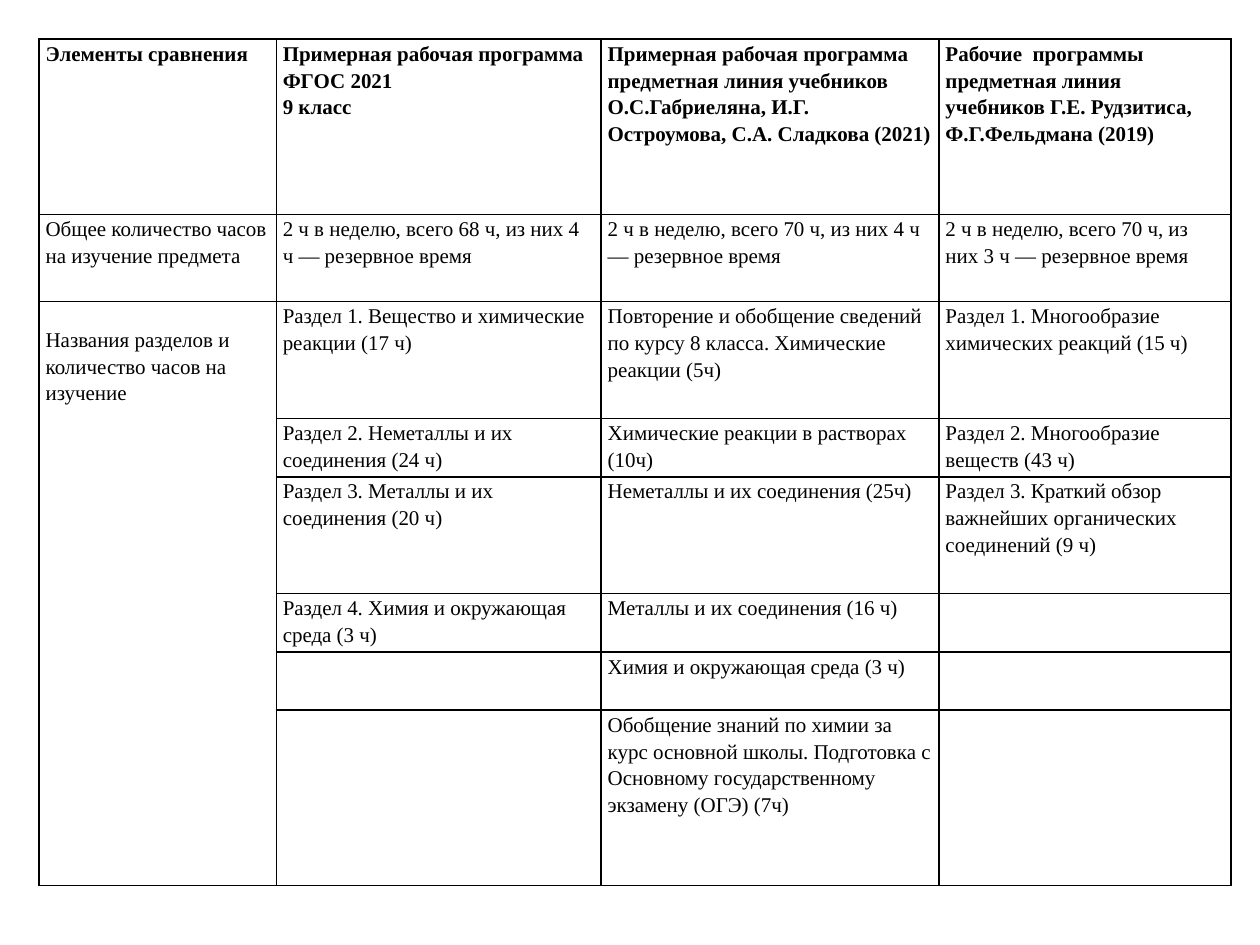
from dataclasses import dataclass

from lxml import etree
from pptx import Presentation
from pptx.dml.color import RGBColor
from pptx.oxml.ns import qn
from pptx.table import _Cell
from pptx.util import Cm, Pt

BLANK_LAYOUT = 6
FONT = "Times New Roman"
INK = "000000"
COLUMN_WIDTHS = (4.78, 6.55, 6.81, 5.89)
TABLE_LEFT = TABLE_TOP = 0.79
TABLE_HEIGHT = 17.06
SIDE_INSET = 0.13
SECTIONS_TOP_INSET = 0.47


@dataclass(frozen=True)
class ComparisonRow:
    lines: int
    texts: tuple[str, str, str, str]
    bold: bool = False


COMPARISON = (
    ComparisonRow(6, (
        "Элементы сравнения",
        "Примерная рабочая программа ФГОС 2021\n9 класс",
        "Примерная рабочая программа предметная линия учебников "
        "О.С.Габриеляна, И.Г. Остроумова, С.А. Сладкова (2021)",
        "Рабочие  программы предметная линия учебников "
        "Г.Е. Рудзитиса, Ф.Г.Фельдмана (2019)",
    ), bold=True),
    ComparisonRow(3, (
        "Общее количество часов на изучение предмета",
        "2 ч в неделю, всего 68 ч, из них 4 ч — резервное время",
        "2 ч в неделю, всего 70 ч, из них 4 ч — резервное время",
        "2 ч в неделю, всего 70 ч, из них 3 ч — резервное время",
    )),
    ComparisonRow(4, (
        "Названия разделов и количество часов на изучение",
        "Раздел 1. Вещество и химические реакции (17 ч)",
        "Повторение и обобщение сведений по курсу 8 класса. Химические реакции (5ч)",
        "Раздел 1. Многообразие химических реакций (15 ч)",
    )),
    ComparisonRow(2, (
        "",
        "Раздел 2. Неметаллы и их соединения (24 ч)",
        "Химические реакции в растворах (10ч)",
        "Раздел 2. Многообразие веществ (43 ч)",
    )),
    ComparisonRow(4, (
        "",
        "Раздел 3. Металлы и их соединения (20 ч)",
        "Неметаллы и их соединения (25ч)",
        "Раздел 3. Краткий обзор важнейших органических соединений (9 ч)",
    )),
    ComparisonRow(2, (
        "",
        "Раздел 4. Химия и окружающая среда (3 ч)",
        "Металлы и их соединения (16 ч)",
        "",
    )),
    ComparisonRow(2, ("", "", "Химия и окружающая среда (3 ч)", "")),
    ComparisonRow(6, (
        "",
        "",
        "Обобщение знаний по химии за курс основной школы. Подготовка с "
        "Основному государственному экзамену (ОГЭ) (7ч)",
        "",
    )),
)
SECTIONS_ROW = 2


def color(value: str) -> RGBColor:
    return RGBColor.from_string(value)


def draw_borders(cell: _Cell) -> None:
    properties = cell._tc.get_or_add_tcPr()
    for side in ("a:lnL", "a:lnR", "a:lnT", "a:lnB"):
        line = etree.SubElement(properties, qn(side), w=str(Pt(1)))
        fill = etree.SubElement(line, qn("a:solidFill"))
        etree.SubElement(fill, qn("a:srgbClr"), val=INK)


def fill_cell(cell: _Cell, text: str, bold: bool) -> None:
    draw_borders(cell)
    cell.fill.background()
    cell.margin_left = cell.margin_right = Cm(SIDE_INSET)
    cell.margin_top = cell.margin_bottom = Cm(0)
    for index, wording in enumerate(text.split("\n")):
        frame = cell.text_frame
        paragraph = frame.add_paragraph() if index else frame.paragraphs[0]
        paragraph.line_spacing = 1.15
        paragraph.font.size = Pt(12)
        if wording:
            run = paragraph.add_run()
            run.text = wording
            run.font.name = FONT
            run.font.size = Pt(12)
            run.font.bold = bold
            run.font.color.rgb = color(INK)


def main() -> None:
    presentation = Presentation()
    presentation.slide_width = Cm(25.4)
    presentation.slide_height = Cm(19.05)
    slide = presentation.slides.add_slide(presentation.slide_layouts[BLANK_LAYOUT])

    table = slide.shapes.add_table(
        len(COMPARISON), len(COLUMN_WIDTHS),
        Cm(TABLE_LEFT), Cm(TABLE_TOP), Cm(sum(COLUMN_WIDTHS)), Cm(TABLE_HEIGHT),
    ).table
    table.first_row = False
    table.horz_banding = False
    for column, width in zip(table.columns, COLUMN_WIDTHS):
        column.width = Cm(width)

    line_height = TABLE_HEIGHT / sum(row.lines for row in COMPARISON)
    for row_index, row in enumerate(COMPARISON):
        table.rows[row_index].height = Cm(row.lines * line_height)
        for column_index, text in enumerate(row.texts):
            fill_cell(table.cell(row_index, column_index), text, row.bold)

    sections_label = table.cell(SECTIONS_ROW, 0)
    sections_label.merge(table.cell(len(COMPARISON) - 1, 0))
    sections_label.margin_top = Cm(SECTIONS_TOP_INSET)

    presentation.save("out.pptx")


if __name__ == "__main__":
    main()
